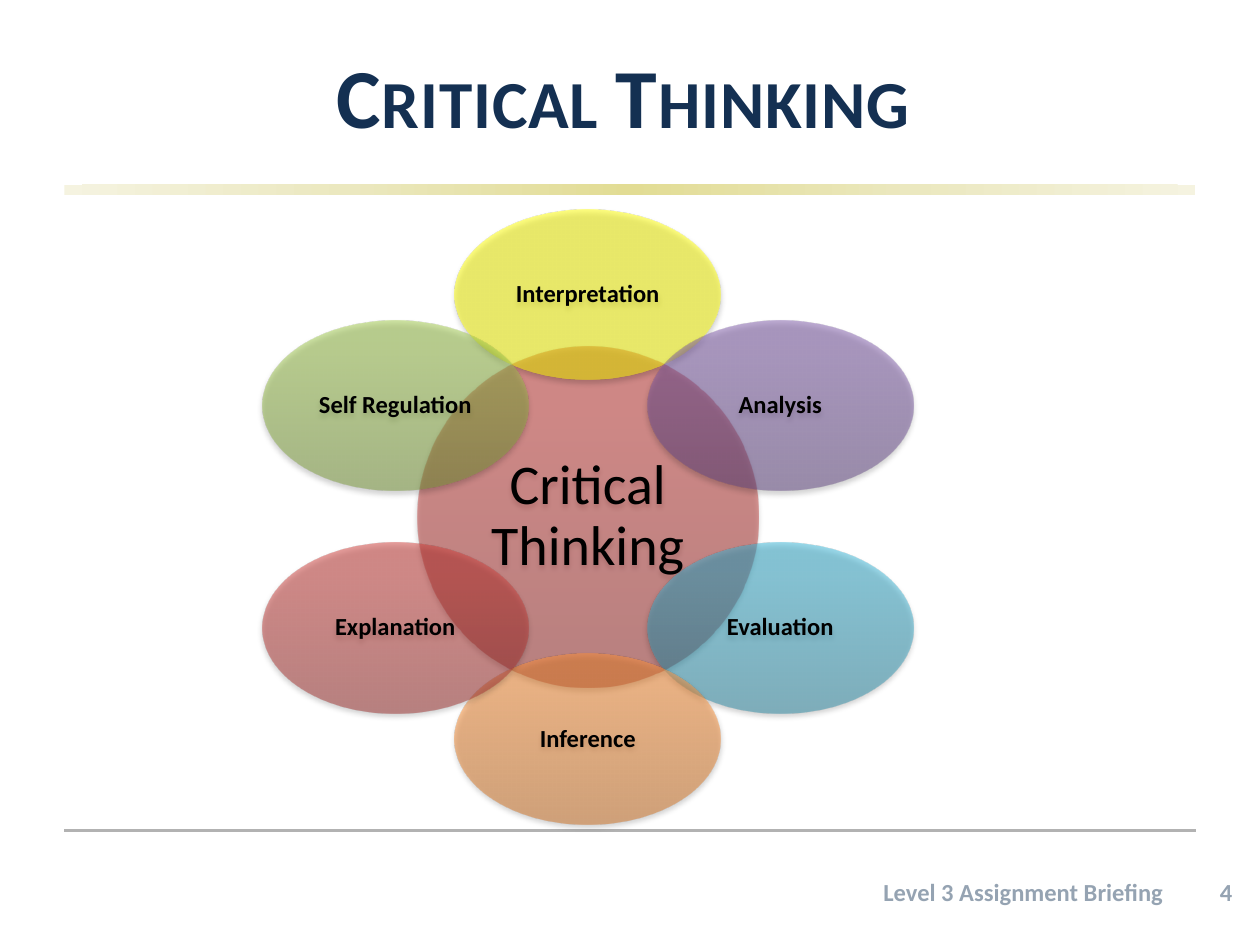
import math
from dataclasses import dataclass

from lxml import etree
from pptx import Presentation
from pptx import util as u
from pptx.dml.color import RGBColor
from pptx.enum import shapes, text
from pptx.oxml.ns import nsdecls, qn


@dataclass
class Theme:
    font: str = "Calibri"
    navy: str = "143052"
    muted: str = "95A3B2"
    black: str = "000000"
    rule: str = "B2B2B2"
    band: tuple = ("E2DC94", "EBE8BF", "F5F3E0")
    yellow: tuple = ("FFFF00", "FFFF00", "FFFF00")
    red: tuple = ("9C2F2D", "CB3E3A", "CE3B37")
    purple: tuple = ("5F4480", "7B58A6", "7C57A8")
    aqua: tuple = ("2A88A2", "37B1D2", "34B4D6")
    orange: tuple = ("CC6E20", "FF9034", "FF9136")
    green: tuple = ("779737", "9BC348", "9DC746")
    title_size: int = 48
    hub_size: int = 32
    small_size: int = 14


theme = Theme()


def fill_gradient(shape, colors, middle, opacity, direction):
    stops = "".join(
        f'<a:gs pos="{position * 1000}"><a:srgbClr val="{color}">'
        f'<a:alpha val="{opacity * 1000}"/></a:srgbClr></a:gs>'
        for position, color in zip((0, middle, 100), colors)
    )
    gradient = etree.fromstring(
        f'<a:gradFill {nsdecls("a")} rotWithShape="1"><a:gsLst>{stops}</a:gsLst>{direction}</a:gradFill>'
    )
    shape._element.spPr.find(qn("a:prstGeom")).addnext(gradient)
    shape.line.fill.background()
    shape.shadow.inherit = False


def write_text(shape, words, size, color, alignment, anchor, bold=True):
    frame = shape.text_frame
    frame.word_wrap = True
    frame.vertical_anchor = anchor
    frame.text = words
    paragraph = frame.paragraphs[0]
    paragraph.alignment = alignment
    font = paragraph.runs[0].font
    font.name = theme.font
    font.size = u.Pt(size)
    font.bold = bold
    font.color.rgb = RGBColor.from_string(color)
    return paragraph


presentation = Presentation()
presentation.slide_width = u.Cm(25.4)
presentation.slide_height = u.Cm(19.05)
slide = presentation.slides.add_slide(presentation.slide_layouts[6])
align, anchors = text.PP_ALIGN, text.MSO_ANCHOR

band = slide.shapes.add_shape(
    shapes.MSO_SHAPE.RECTANGLE, u.Cm(1.3), u.Cm(3.73), u.Cm(22.8), u.Cm(0.2)
)
fill_gradient(
    band, theme.band, 50, 100,
    '<a:path path="circle"><a:fillToRect l="50000" t="50000" r="50000" b="50000"/></a:path>',
)

rule = slide.shapes.add_connector(
    shapes.MSO_CONNECTOR.STRAIGHT, u.Cm(1.3), u.Cm(16.74), u.Cm(24.1), u.Cm(16.74)
)
rule.line.color.rgb = RGBColor.from_string(theme.rule)
rule.line.width = u.Pt(1.5)
etree.SubElement(rule._element.spPr, qn("a:effectLst"))

title = slide.shapes.add_textbox(u.Cm(1.3), u.Cm(0.33), u.Cm(22.83), u.Cm(3.18))
paragraph = write_text(
    title, "Critical Thinking", theme.title_size, theme.navy, align.CENTER, anchors.MIDDLE
)
properties = paragraph.runs[0]._r.get_or_add_rPr()
properties.set("cap", "small")
properties.set("spc", "50")
properties.insert(0, etree.fromstring(
    f'<a:ln {nsdecls("a")} w="11430"><a:solidFill><a:srgbClr val="{theme.navy}"/></a:solidFill></a:ln>'
))

center_x, center_y, radius = 11.85, 10.42, 4.48
petals = [
    ("Interpretation", theme.yellow),
    ("Analysis", theme.purple),
    ("Evaluation", theme.aqua),
    ("Inference", theme.orange),
    ("Explanation", theme.red),
    ("Self Regulation", theme.green),
]
ellipses = [("Critical Thinking", theme.red, center_x, center_y, 6.88, 6.88, theme.hub_size, False, 0.1)]
for index, (label, colors) in enumerate(petals):
    angle = 2 * math.pi * index / len(petals)
    x = center_x + radius * math.sin(angle)
    y = center_y - radius * math.cos(angle)
    ellipses.append((label, colors, x, y, 5.36, 3.43, theme.small_size, True, 0.05))

for label, colors, x, y, width, height, size, bold, inset in ellipses:
    ellipse = slide.shapes.add_shape(
        shapes.MSO_SHAPE.OVAL,
        u.Cm(x - width / 2), u.Cm(y - height / 2), u.Cm(width), u.Cm(height),
    )
    fill_gradient(ellipse, colors, 80, 50, '<a:lin ang="16200000" scaled="0"/>')
    ellipse._element.spPr.find(qn("a:effectLst")).append(etree.fromstring(
        f'<a:outerShdw {nsdecls("a")} blurRad="39370" dist="22860" dir="5400000" rotWithShape="0">'
        f'<a:srgbClr val="{theme.black}"><a:alpha val="35000"/></a:srgbClr></a:outerShdw>'
    ))
    frame = ellipse.text_frame
    frame.margin_left = frame.margin_right = u.Cm(inset)
    frame.margin_top = frame.margin_bottom = u.Cm(inset)
    paragraph = write_text(ellipse, label, size, theme.black, align.CENTER, anchors.MIDDLE, bold)
    paragraph.line_spacing = 0.9

footer = slide.shapes.add_textbox(u.Cm(8.69), u.Cm(17.55), u.Cm(15.01), u.Cm(0.99))
write_text(
    footer, "Level 3 Assignment Briefing", theme.small_size, theme.muted, align.RIGHT, anchors.TOP
)
number = slide.shapes.add_textbox(u.Cm(23.9), u.Cm(17.32), u.Cm(1.19), u.Cm(1.3))
write_text(number, "4", theme.small_size, theme.muted, align.RIGHT, anchors.MIDDLE)

presentation.save("out.pptx")
